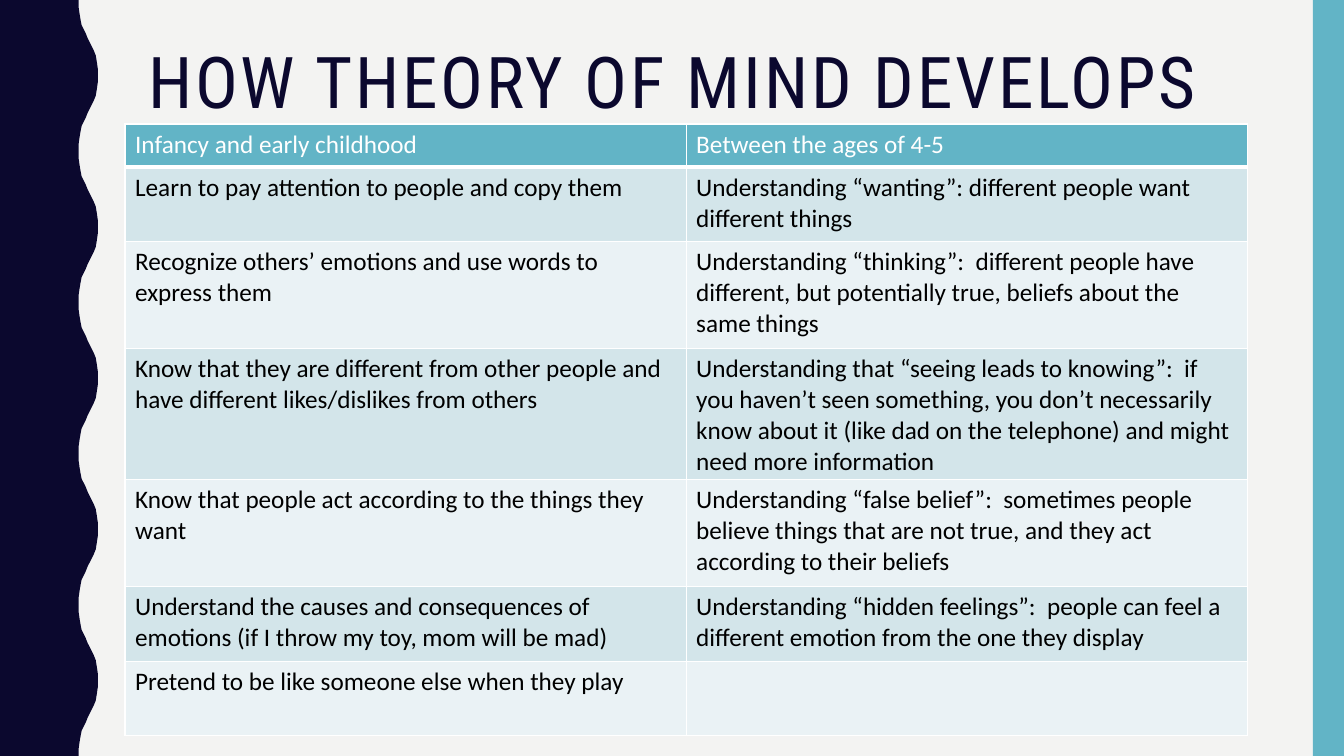
import pptx
import pptx.dml.color
import pptx.enum.text
import pptx.oxml
import pptx.oxml.ns
import pptx.util
from pptx.util import Inches

NAVY, TEAL, WHITE, BLACK = "0B082E", "62B4C6", "FFFFFF", "000000"
PAPER, DARK_BAND, LIGHT_BAND = "F3F3F2", "D3E5EA", "EAF2F5"

ROWS = [
    ("Infancy and early childhood", "Between the ages of 4-5"),
    ("Learn to pay attention to people and copy them",
     "Understanding “wanting”: different people want different things"),
    ("Recognize others’ emotions and use words to express them",
     "Understanding “thinking”:  different people have different, but potentially true, "
     "beliefs about the same things"),
    ("Know that they are different from other people and have different likes/dislikes from others",
     "Understanding that “seeing leads to knowing”:  if you haven’t seen something, you don’t "
     "necessarily know about it (like dad on the telephone) and might need more information"),
    ("Know that people act according to the things they want",
     "Understanding “false belief”:  sometimes people believe things that are not true, "
     "and they act according to their beliefs"),
    ("Understand the causes and consequences of emotions (if I throw my toy, mom will be mad)",
     "Understanding “hidden feelings”:  people can feel a different emotion from the one they display"),
    ("Pretend to be like someone else when they play", ""),
]
ROW_HEIGHTS = [0.43, 0.74, 1.06, 1.06, 1.06, 0.74, 0.74]

# Half of one wave, trough to crest; the other half mirrors it
WAVE_PERIOD, WAVE_COUNT = 1.5, 5
HALF_WAVE = [(0.78, 0), (0.78, 0.07), (0.79, 0.14), (0.8, 0.2), (0.81, 0.25),
             (0.83, 0.29), (0.85, 0.33), (0.87, 0.38), (0.89, 0.42), (0.91, 0.46),
             (0.93, 0.5), (0.95, 0.55), (0.96, 0.61), (0.97, 0.68), (0.97, 0.75)]


def rgb(code):
    return pptx.dml.color.RGBColor.from_string(code)


def paint(target, code):
    target.fill.solid()
    target.fill.fore_color.rgb = rgb(code)


def finish_shape(shape, code):
    paint(shape, code)
    shape.line.fill.background()
    shape.shadow.inherit = False


def style_text(paragraph, font_name, size, code):
    for span in paragraph.runs:
        span.font.name = font_name
        span.font.size = pptx.util.Pt(size)
        span.font.color.rgb = rgb(code)


def add_wavy_edge(page):
    one_wave = HALF_WAVE + [(x, WAVE_PERIOD - y) for x, y in HALF_WAVE[-2::-1]]
    points = [(x, y + WAVE_PERIOD * wave) for wave in range(WAVE_COUNT) for x, y in one_wave]
    points.append((0, WAVE_PERIOD * WAVE_COUNT))
    builder = page.shapes.build_freeform(0, 0)
    builder.add_line_segments([(Inches(x), Inches(y)) for x, y in points], close=True)
    finish_shape(builder.convert_to_shape(), NAVY)


def add_side_bar(page):
    bar = page.shapes.add_shape(pptx.enum.shapes.MSO_SHAPE.RECTANGLE,
                                Inches(13.02), 0, Inches(0.31), Inches(7.5))
    finish_shape(bar, TEAL)


def add_title(page, text):
    box = page.shapes.add_textbox(Inches(1.37), Inches(0.42), Inches(11.13), Inches(1.63))
    box.text_frame.word_wrap = True
    box.text_frame.vertical_anchor = pptx.enum.text.MSO_ANCHOR.TOP
    para = box.text_frame.paragraphs[0]
    para.text = text
    para.line_spacing = 0.9
    style_text(para, "Roboto Condensed", 51, NAVY)
    para.runs[0].font._element.set("spc", "200")


def add_borders(cell, bottom_width):
    properties = cell._tc.get_or_add_tcPr()
    for side, width in (("L", 1), ("R", 1), ("T", 1), ("B", bottom_width)):
        properties.append(pptx.oxml.parse_xml(
            f'<a:ln{side} {pptx.oxml.ns.nsdecls("a")} w="{pptx.util.Pt(width)}">'
            f'<a:solidFill><a:srgbClr val="{WHITE}"/></a:solidFill></a:ln{side}>'))


def add_stage_table(page):
    frame = page.shapes.add_table(len(ROWS), 2, Inches(1.24), Inches(1.23),
                                  Inches(11.13), Inches(sum(ROW_HEIGHTS)))
    table = frame.table
    for row_index, texts in enumerate(ROWS):
        table.rows[row_index].height = Inches(ROW_HEIGHTS[row_index])
        is_header = row_index == 0
        band = TEAL if is_header else DARK_BAND if row_index % 2 else LIGHT_BAND
        for column_index, text in enumerate(texts):
            cell = table.cell(row_index, column_index)
            add_borders(cell, 3 if is_header else 1)
            paint(cell, band)
            if text:
                cell.text_frame.text = text
                para = cell.text_frame.paragraphs[0]
                style_text(para, "Calibri", 18, WHITE if is_header else BLACK)
                para.runs[0].font.bold = False


def main():
    deck = pptx.Presentation()
    deck.slide_width, deck.slide_height = Inches(13.33), Inches(7.5)
    page = deck.slides.add_slide(deck.slide_layouts[6])
    paint(page.background, PAPER)

    # Decoration on both edges
    add_wavy_edge(page)
    add_side_bar(page)

    # Content
    add_title(page, "HOW THEORY OF MIND DEVELOPS")
    add_stage_table(page)
    deck.save("out.pptx")


if __name__ == "__main__":
    main()
